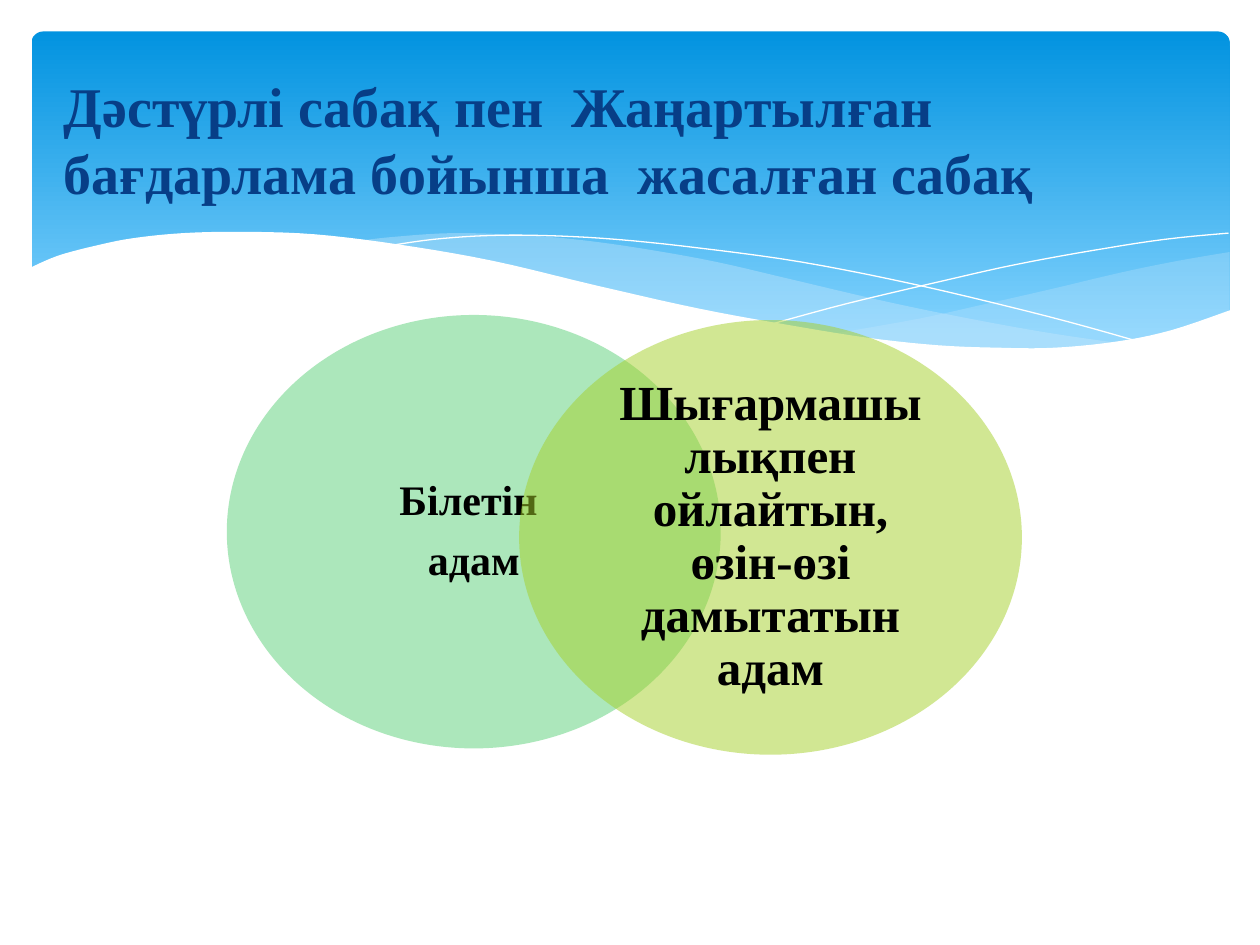
import pptx
import pptx.util
import pptx.dml.color
import pptx.enum.shapes
import pptx.enum.text
import pptx.oxml.ns
import lxml.etree

Inches = pptx.util.Inches
Pt = pptx.util.Pt
Kind = pptx.enum.shapes.MSO_SHAPE
Anchor = pptx.enum.text.MSO_ANCHOR
Align = pptx.enum.text.PP_ALIGN

COLORS = {
    "sky": "0293E0", "pale": "83D3FE", "mist": "C6E7FC", "white": "FFFFFF",
    "navy": "073E87", "black": "000000", "green": "5BD078", "lime": "A5D028",
}

RIGHT = [(9.76, 2), (9.35, 2.07), (8.91, 2.16), (8.32, 2.3), (7.79, 2.42),
         (7.29, 2.53), (6.61, 2.65)]
BELOW = [(6.61, 2.65), (7.05, 2.71), (7.57, 2.76), (8.14, 2.78),
         (8.63, 2.75), (9.05, 2.69), (9.42, 2.59), (9.76, 2.47)]
CREST = [(8.93, 2.73), (8.37, 2.65), (7.75, 2.54), (7.06, 2.4),
         (6.29, 2.22), (5.69, 2.08), (5.14, 1.98), (4.65, 1.91),
         (4.2, 1.87), (3.61, 1.85), (3.13, 1.88), (2.86, 1.91)]
TROUGH = [(2.86, 1.91), (3.42, 1.99), (4.04, 2.11), (4.49, 2.22),
          (5.3, 2.4), (6.01, 2.55), (6.65, 2.66), (7.22, 2.74),
          (7.73, 2.77), (8.18, 2.78), (8.57, 2.77), (8.93, 2.73)]
FALL = [(3.09, 1.95), (3.44, 1.9), (3.87, 1.87), (4.33, 1.87), (4.89, 1.9),
        (5.56, 1.97), (6.36, 2.08), (7.27, 2.26), (8.31, 2.51), (9.07, 2.72)]
RISE = [(6.13, 2.57), (6.72, 2.41), (7.48, 2.23), (8.06, 2.1),
        (8.66, 1.99), (9.24, 1.9), (9.75, 1.85)]
SHORE = [(9.77, 2.46), (9.3, 2.62), (8.87, 2.71), (8.37, 2.76),
         (7.93, 2.76), (7.44, 2.74), (6.88, 2.68), (6.26, 2.58),
         (5.55, 2.45), (4.75, 2.27), (3.91, 2.07), (3.16, 1.94),
         (2.5, 1.86), (1.93, 1.84), (1.46, 1.85), (1.06, 1.89),
         (0.76, 1.95), (0.46, 2.03), (0.23, 2.13)]


def curve(keys, steps=5):
    """Return a smooth run of points through the keys."""
    ends = [keys[0], *keys, keys[-1]]
    run = [keys[0]]
    for a, b, c, d in zip(ends, ends[1:], ends[2:], ends[3:]):
        for step in range(1, steps + 1):
            t = step / steps
            run.append(tuple(
                (2 * q + (r - p) * t + (2 * p - 5 * q + 4 * r - s) * t ** 2
                 + (3 * q - p - 3 * r + s) * t ** 3) / 2
                for p, q, r, s in zip(a, b, c, d)))
    return run


def tint(name):
    """Return the named colour."""
    return pptx.dml.color.RGBColor.from_string(COLORS[name])


class Deck:
    """Hold the style and the current slide."""

    font = "Times New Roman"

    def __init__(self, slide):
        """Keep the slide."""
        self.slide = slide

    def paint(self, shape, color, alpha=100):
        """Give a shape a plain fill without line or shadow."""
        shape.shadow.inherit = False
        shape.line.fill.background()
        shape.fill.solid()
        shape.fill.fore_color.rgb = tint(color)
        if alpha < 100:
            tag = pptx.oxml.ns.qn("a:srgbClr")
            node = next(shape.element.spPr.iter(tag))
            lxml.etree.SubElement(node, pptx.oxml.ns.qn("a:alpha"),
                                  val=str(alpha * 1000))

    def panel(self, box, top, base):
        """Add the rounded panel with a vertical gradient."""
        shape = self.slide.shapes.add_shape(
            Kind.ROUNDED_RECTANGLE, *map(Inches, box))
        shape.adjustments[0] = 0.034
        shape.shadow.inherit = False
        shape.line.fill.background()
        shape.fill.gradient()
        shape.fill.gradient_angle = 270
        stops = shape.fill.gradient_stops
        for stop, color, place in zip(stops, (top, base), (0, 0.9)):
            stop.color.rgb = tint(color)
            stop.position = place

    def trace(self, points, close):
        """Add an outline through the points."""
        first, *rest = [(Inches(x), Inches(y)) for x, y in points]
        pen = self.slide.shapes.build_freeform(*first)
        pen.add_line_segments(rest, close=close)
        return pen.convert_to_shape()

    def wave(self, points, color, alpha=100):
        """Add a filled wave."""
        self.paint(self.trace(points, True), color, alpha)

    def strand(self, points, color):
        """Add a hairline curve."""
        shape = self.trace(points, False)
        shape.shadow.inherit = False
        shape.fill.background()
        shape.line.color.rgb = tint(color)
        shape.line.width = Pt(0)

    def text(self, words, box, size, color="black", align=Align.LEFT,
             anchor=Anchor.TOP, inset=None, **space):
        """Add a text box with one paragraph for each line of words."""
        frame = self.slide.shapes.add_textbox(*map(Inches, box)).text_frame
        frame.word_wrap = True
        frame.vertical_anchor = anchor
        if inset is not None:
            frame.margin_left = frame.margin_right = Inches(inset)
            frame.margin_top = frame.margin_bottom = Inches(inset)
        for i, line in enumerate(words.split("\n")):
            para = frame.add_paragraph() if i else frame.paragraphs[0]
            para.alignment = align
            for key, value in space.items():
                setattr(para, key, value)
            run = para.add_run()
            run.text = line
            run.font.name = self.font
            run.font.size = Pt(size)
            run.font.bold = True
            run.font.color.rgb = tint(color)

    def circle(self, words, box, color, size, inset):
        """Add a clear ellipse with its text in the inscribed box."""
        shape = self.slide.shapes.add_shape(Kind.OVAL, *map(Inches, box))
        self.paint(shape, color, 50)
        left, top, wide, high = box
        trim = (1 - 0.5 ** 0.5) / 2
        inner = (left + wide * trim, top + high * trim,
                 wide * 0.5 ** 0.5, high * 0.5 ** 0.5)
        self.text(words, inner, size, align=Align.CENTER,
                  anchor=Anchor.MIDDLE, inset=inset, line_spacing=0.9,
                  space_after=Pt(size * 0.35))


def main():
    """Build and save the slide."""
    show = pptx.Presentation()
    show.slide_width, show.slide_height = Inches(10), Inches(7.5)
    deck = Deck(show.slides.add_slide(show.slide_layouts[6]))
    deck.panel((0.25, 0.25, 9.51, 2.7), "sky", "pale")
    deck.wave(curve(RIGHT) + curve(BELOW), "mist", 29)
    deck.wave(curve(CREST) + curve(TROUGH), "mist", 40)
    deck.strand(curve(FALL), "white")
    deck.strand(curve(RISE), "white")
    deck.wave(curve(SHORE) + [(0.23, 3.29), (9.77, 3.29)], "white")
    deck.text("Дәстүрлі сабақ пен  Жаңартылған бағдарлама бойынша  "
              "жасалған сабақ", (0.41, 0.52, 9, 1.65), 32, "navy",
              space_before=Pt(6.4))
    deck.circle("Білетін \nадам", (1.8, 2.5, 3.92, 3.44), "green", 24, 0.1)
    deck.circle("Шығармашылықпен ойлайтын, өзін-өзі дамытатын адам",
                (4.12, 2.54, 3.99, 3.45), "lime", 28, 0.12)
    show.save("out.pptx")


if __name__ == "__main__":
    main()
